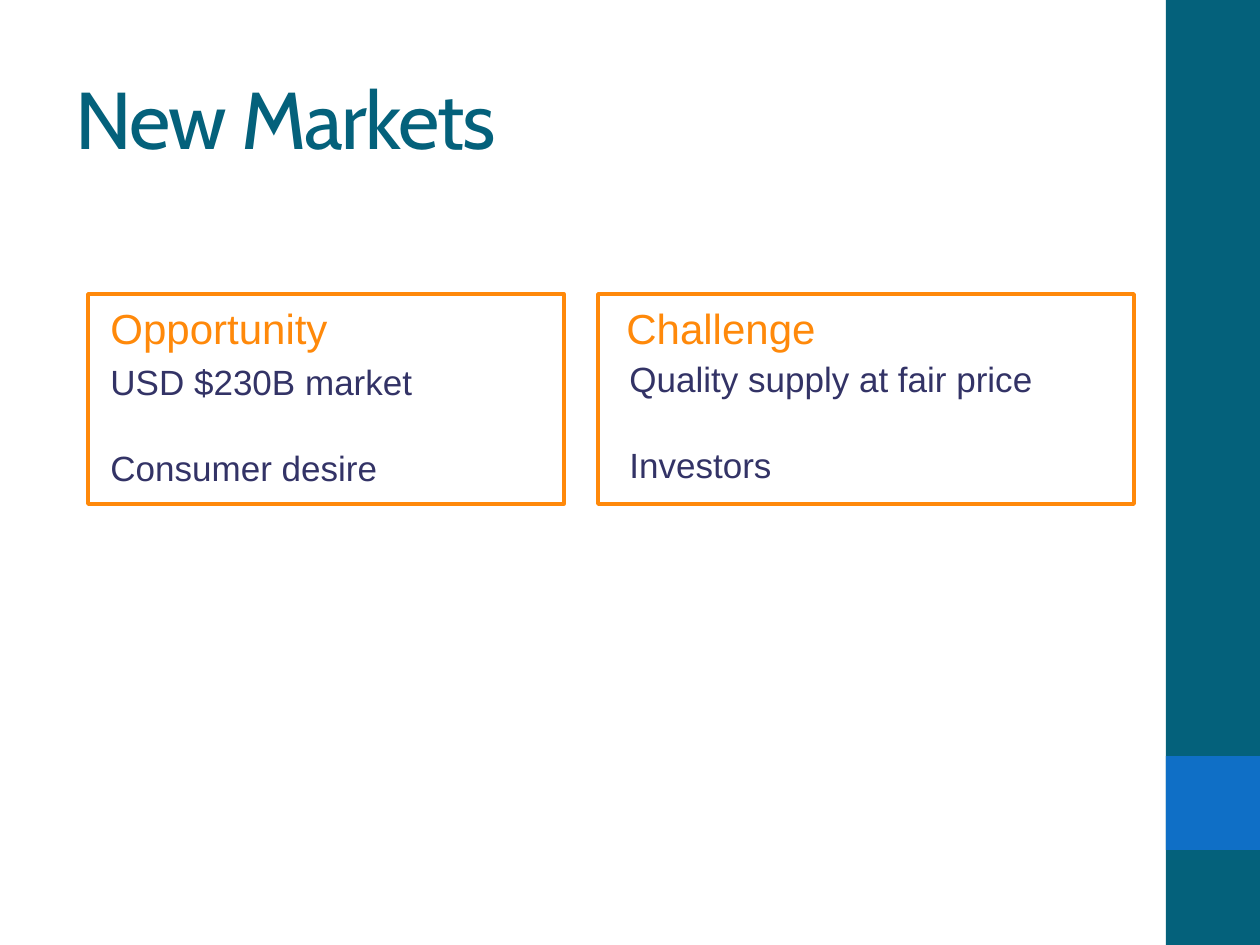
from dataclasses import dataclass

from pptx import Presentation
from pptx.dml.color import RGBColor
from pptx.enum.shapes import MSO_SHAPE
from pptx.enum.text import MSO_ANCHOR
from pptx.util import Emu, Pt

TITLE = "New Markets"
PANELS = [
    {
        "heading": "Opportunity",
        "points": ["USD $230B market", "Consumer desire"],
        "frame": (88, 294, 476, 210),
        "heading_box": (98, 294, 244, 64),
        "points_box": (98, 352, 567, 140),
    },
    {
        "heading": "Challenge",
        "points": ["Quality supply at fair price", "Investors"],
        "frame": (598, 294, 536, 210),
        "heading_box": (614, 294, 217, 64),
        "points_box": (617, 349, 567, 140),
    },
]
SIDEBAR = (1166, 0, 94, 945)
SIDEBAR_ACCENT = (1166, 756, 94, 94)
TITLE_BOX = (63, 38, 1050, 158)


@dataclass(frozen=True)
class Theme:
    teal: str = "04617B"
    blue: str = "0F6FC6"
    orange: str = "FF890A"
    navy: str = "333366"
    title_font: str = "Cabin"
    body_font: str = "Arial"
    title_size: int = 46
    heading_size: int = 24
    point_size: int = 20
    line_spacing: float = 1.05
    point_gap: int = 24
    frame_width: int = 2


THEME = Theme()
EMU_PER_PX = 914400 / 126


def scaled(box):
    return [Emu(round(length * EMU_PER_PX)) for length in box]


def add_rectangle(slide, box, fill=None, line=None):
    shape = slide.shapes.add_shape(MSO_SHAPE.RECTANGLE, *scaled(box))
    shape.shadow.inherit = False
    if fill:
        shape.fill.solid()
        shape.fill.fore_color.rgb = RGBColor.from_string(fill)
    else:
        shape.fill.background()
    if line:
        shape.line.color.rgb = RGBColor.from_string(line)
        shape.line.width = Pt(THEME.frame_width)
    else:
        shape.line.fill.background()


def add_text(slide, box, lines, font, size, color, wrap=True, line_spacing=None):
    text_frame = slide.shapes.add_textbox(*scaled(box)).text_frame
    text_frame.word_wrap = wrap
    text_frame.text = "\n".join(lines)
    for index, paragraph in enumerate(text_frame.paragraphs):
        paragraph.line_spacing = line_spacing
        if index:
            paragraph.space_before = Pt(THEME.point_gap)
        for run in paragraph.runs:
            run.font.name = font
            run.font.size = Pt(size)
            run.font.color.rgb = RGBColor.from_string(color)
    return text_frame


def add_title(slide):
    text_frame = add_text(
        slide, TITLE_BOX, [TITLE], THEME.title_font, THEME.title_size, THEME.teal
    )
    text_frame.vertical_anchor = MSO_ANCHOR.MIDDLE
    for run in text_frame.paragraphs[0].runs:
        run.font._element.set("spc", "-100")


def add_panel(slide, panel):
    add_rectangle(slide, panel["frame"], line=THEME.orange)
    add_text(
        slide, panel["heading_box"], [panel["heading"]], THEME.body_font,
        THEME.heading_size, THEME.orange, False, THEME.line_spacing,
    )
    add_text(
        slide, panel["points_box"], panel["points"], THEME.body_font,
        THEME.point_size, THEME.navy, True, THEME.line_spacing,
    )


def main():
    presentation = Presentation()
    presentation.slide_width, presentation.slide_height = scaled((1260, 945))
    slide = presentation.slides.add_slide(presentation.slide_layouts[6])
    add_rectangle(slide, SIDEBAR, fill=THEME.teal)
    add_rectangle(slide, SIDEBAR_ACCENT, fill=THEME.blue)
    add_title(slide)
    for panel in PANELS:
        add_panel(slide, panel)
    presentation.save("out.pptx")


if __name__ == "__main__":
    main()
